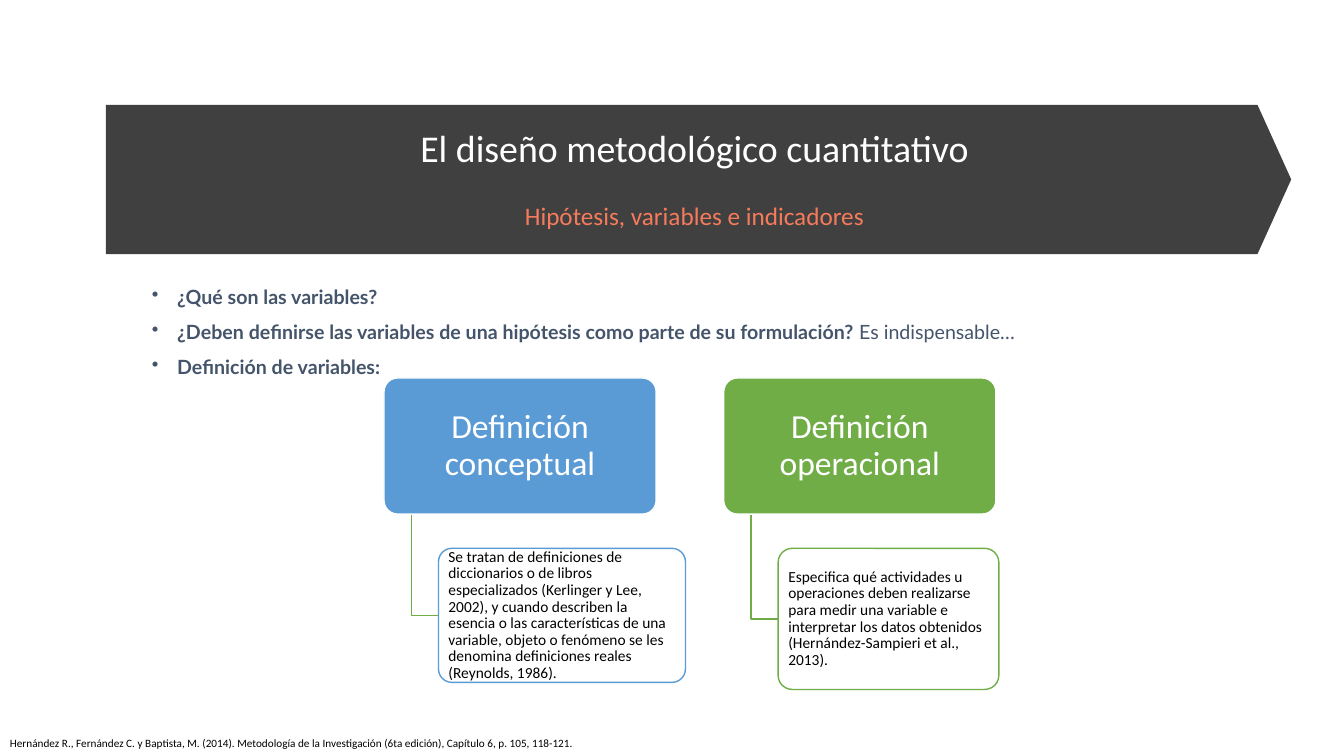
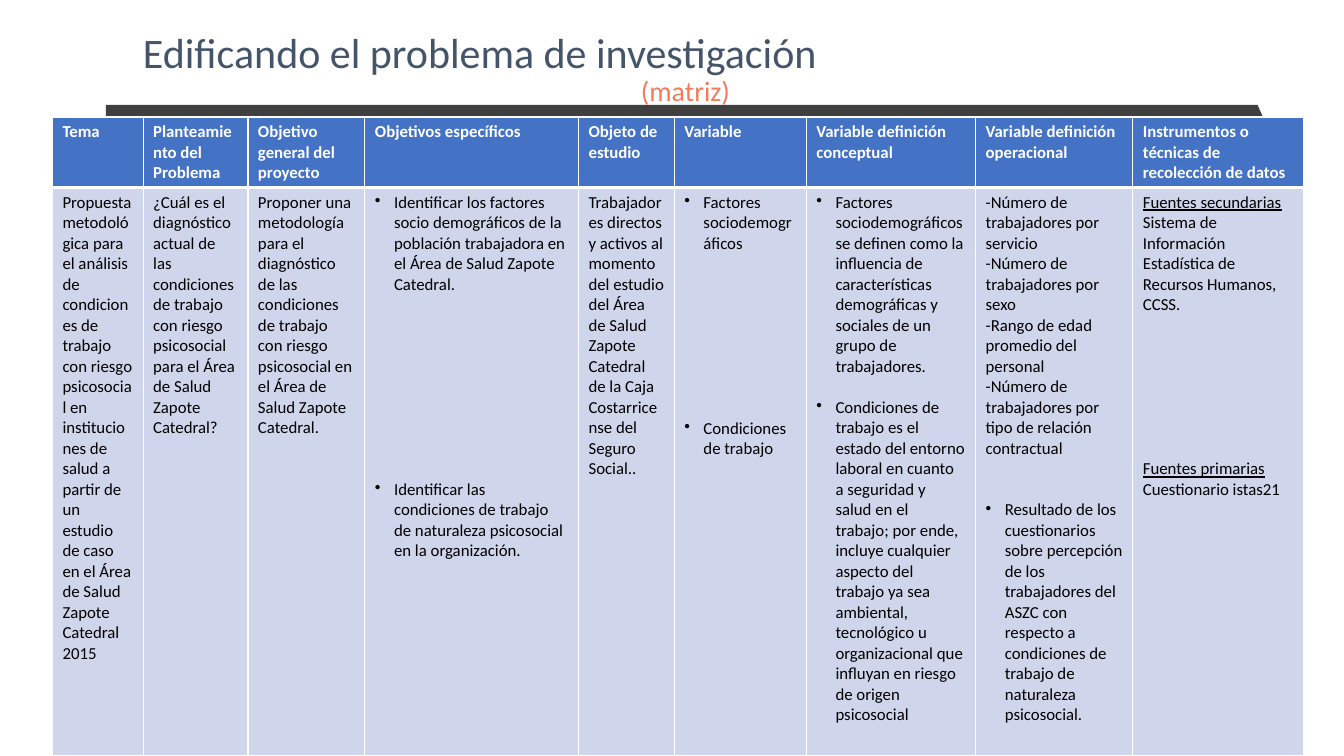
import pptx
import pptx.dml.color
import pptx.enum.shapes
import pptx.enum.text
import pptx.oxml
import pptx.oxml.ns
import pptx.util
from lxml import etree

SHAPES = pptx.enum.shapes.MSO_SHAPE
MIDDLE = pptx.enum.text.MSO_ANCHOR.MIDDLE
LEFT = pptx.enum.text.PP_ALIGN.LEFT
CENTER = pptx.enum.text.PP_ALIGN.CENTER
BAND, SLATE, CORAL = "404040", "44546A", "F57B5B"
BLUE, GREEN, WHITE, BLACK = "5B9BD5", "70AD47", "FFFFFF", "000000"
HEADER, BODY = "4472C4", "CFD5EA"
LINE_HEIGHT = 14.65


def color(code):
    return pptx.dml.color.RGBColor.from_string(code)


def add_line(frame, text, size, ink, font="Calibri", align=LEFT, spacing=1.0, before=0, indent=0):
    paragraph = frame.paragraphs[0]
    if paragraph.runs:
        paragraph = frame.add_paragraph()
    paragraph.add_run().text = text
    paragraph.alignment = align
    paragraph.line_spacing = spacing
    paragraph.space_before = pptx.util.Pt(before)
    if indent:
        properties = paragraph._p.get_or_add_pPr()
        properties.set("marL", str(pptx.util.Inches(indent)))
        properties.set("indent", str(-pptx.util.Inches(indent)))
        bullet = etree.SubElement(properties, pptx.oxml.ns.qn("a:buChar"))
        bullet.set("char", "•")
    paragraph.font.name = font
    paragraph.font.size = pptx.util.Pt(size)
    paragraph.font.color.rgb = color(ink)
    return paragraph


deck = pptx.Presentation()
deck.slide_width = pptx.util.Inches(13.333)
deck.slide_height = pptx.util.Inches(7.5)
col = deck.slide_width / 40
row = deck.slide_height / 22.5

headings = [
    (4.23, 3.96, [("El diseño metodológico cuantitativo", 27, WHITE, CENTER, 0),
                  ("Hipótesis, variables e indicadores", 18, CORAL, CENTER, 24)]),
    (3.96, 0.66, [("Edificando el problema de investigación", 30, SLATE, LEFT, 0),
                  ("(matriz)", 20, CORAL, CENTER, 0)]),
]
slides = []
for left, top, lines in headings:
    slide = deck.slides.add_slide(deck.slide_layouts[6])
    slides.append(slide)
    band = slide.shapes.add_shape(SHAPES.PENTAGON, int(3.15 * col), int(3.12 * row),
                                  int(35.28 * col), int(4.44 * row))
    band.adjustments[0] = 0.226
    band.shadow.inherit = False
    band.fill.solid()
    band.fill.fore_color.rgb = color(BAND)
    band.line.fill.background()
    heading = slide.shapes.add_textbox(int(left * col), int(top * row),
                                       int(32.88 * col), int(2.82 * row)).text_frame
    heading.word_wrap = True
    heading.vertical_anchor = MIDDLE
    for text, size, ink, align, before in lines:
        add_line(heading, text, size, ink, align=align, spacing=0.9, before=before)

variables, matrix = slides

questions = variables.shapes.add_textbox(int(4.23 * col), int(8.4 * row),
                                         int(34.68 * col), int(10.59 * row)).text_frame
questions.word_wrap = True
for question, answer in [
    ("¿Qué son las variables?", ""),
    ("¿Deben definirse las variables de una hipótesis como parte de su formulación? ",
     "Es indispensable…"),
    ("Definición de variables:", ""),
]:
    paragraph = add_line(questions, question, 14, SLATE, "Lato", spacing=0.9, before=10, indent=0.25)
    paragraph.runs[0].font.bold = True
    if answer:
        paragraph.add_run().text = answer

reference = variables.shapes.add_textbox(0, int(21.78 * row), int(17.58 * col), int(0.72 * row)).text_frame
reference.word_wrap = False
add_line(reference, "Hernández R., Fernández C. y Baptista, M. (2014). Metodología de la Investigación "
         "(6ta edición), Capítulo 6, p. 105, 118-121.", 8, BLACK)

card_top, card_width, card_height, detail_top = 11.25, 8.1, 4.05, 16.32
definitions = [
    (11.43, BLUE, "Definición conceptual", 7.35, 3.99,
     "Se tratan de definiciones de diccionarios o de libros especializados (Kerlinger y Lee, 2002), "
     "y cuando describen la esencia o las características de una variable, objeto o fenómeno se les "
     "denomina definiciones reales (Reynolds, 1986)."),
    (21.54, GREEN, "Definición operacional", 6.57, 4.2,
     "Especifica qué actividades u operaciones deben realizarse para medir una variable e interpretar "
     "los datos obtenidos (Hernández-Sampieri et al., 2013)."),
]
for left, accent, term, detail_width, detail_height, detail in definitions:
    detail_left = left + 0.2 * card_width
    stem_left = left + 0.1 * card_width
    stem_end = detail_top + detail_height / 2
    stem = variables.shapes.build_freeform(int(stem_left * col), int((card_top + card_height) * row))
    stem.add_line_segments([(int(stem_left * col), int(stem_end * row)),
                            (int(detail_left * col), int(stem_end * row))], close=False)
    branch = stem.convert_to_shape()
    branch.shadow.inherit = False
    branch.fill.background()
    branch.line.color.rgb = color(GREEN)
    branch.line.width = pptx.util.Pt(1)
    for x, y, width, height, fill, edge, text, size, ink, align, margin in [
        (left, card_top, card_width, card_height, accent, WHITE, term, 24, WHITE, CENTER, 0.09),
        (detail_left, detail_top, detail_width, detail_height, WHITE, accent, detail, 11, BLACK, LEFT, 0.06),
    ]:
        card = variables.shapes.add_shape(SHAPES.ROUNDED_RECTANGLE, int(x * col), int(y * row),
                                          int(width * col), int(height * row))
        card.adjustments[0] = 0.1
        card.shadow.inherit = False
        card.fill.solid()
        card.fill.fore_color.rgb = color(fill)
        card.line.color.rgb = color(edge)
        card.line.width = pptx.util.Pt(1)
        frame = card.text_frame
        frame.word_wrap = True
        frame.vertical_anchor = MIDDLE
        frame.margin_left = frame.margin_right = pptx.util.Inches(margin)
        frame.margin_top = frame.margin_bottom = pptx.util.Inches(0.06)
        add_line(frame, text, size, ink, align=align, spacing=0.9)

columns = [
    (2.7, "Tema", [
        ("Propuesta metodológica para el análisis de condiciones de trabajo con riesgo psicosocial en "
         "instituciones de salud a partir de un estudio de caso en el Área de Salud Zapote Catedral 2015",
         "", 0)]),
    (3.12, "Planteamiento del Problema", [
        ("¿Cuál es el diagnóstico actual de las condiciones de trabajo con riesgo psicosocial para el "
         "Área de Salud Zapote Catedral?", "", 0)]),
    (3.48, "Objetivo general del proyecto", [
        ("Proponer una metodología para el diagnóstico de las condiciones de trabajo con riesgo "
         "psicosocial en el Área de Salud Zapote Catedral.", "", 0)]),
    (6.36, "Objetivos específicos", [
        ("Identificar los factores socio demográficos de la población trabajadora en el Área de Salud "
         "Zapote Catedral.", "bullet", 0),
        ("Identificar las condiciones de trabajo de naturaleza psicosocial en la organización.",
         "bullet", 9)]),
    (2.85, "Objeto de estudio", [
        ("Trabajadores directos y activos al momento del estudio del Área de Salud Zapote Catedral de "
         "la Caja Costarricense del Seguro Social..", "", 0)]),
    (3.93, "Variable", [
        ("Factores sociodemográficos", "bullet", 0),
        ("Condiciones de trabajo", "bullet", 8)]),
    (5.04, "Variable definición conceptual", [
        ("Factores sociodemográficos se definen como la influencia de características demográficas y "
         "sociales de un grupo de trabajadores.", "bullet", 0),
        ("Condiciones de trabajo es el estado del entorno laboral en cuanto a seguridad y salud en el "
         "trabajo; por ende, incluye cualquier aspecto del trabajo ya sea ambiental, tecnológico u "
         "organizacional que influyan en riesgo de origen psicosocial", "bullet", 1)]),
    (4.68, "Variable definición operacional", [
        ("-Número de trabajadores por servicio", "", 0),
        ("-Número de trabajadores por sexo", "", 0),
        ("-Rango de edad promedio del personal", "", 0),
        ("-Número de trabajadores por tipo de relación contractual", "", 0),
        ("Resultado de los cuestionarios sobre percepción de los trabajadores del ASZC con respecto a "
         "condiciones de trabajo de naturaleza psicosocial.", "bullet", 2)]),
    (5.07, "Instrumentos o técnicas de recolección de datos", [
        ("Fuentes secundarias", "underline", 0),
        ("Sistema de Información Estadística de Recursos Humanos, CCSS.", "", 0),
        ("Fuentes primarias", "underline", 7),
        ("Cuestionario istas21", "", 0)]),
]
table_width = sum(width for width, title, entries in columns)
grid = matrix.shapes.add_table(2, len(columns), int(1.56 * col), int(3.48 * row),
                               int(table_width * col), int(19.02 * row)).table
grid.horz_banding = False
grid.rows[0].height = int(2.1 * row)
grid.rows[1].height = int(16.92 * row)
for index, (width, title, entries) in enumerate(columns):
    grid.columns[index].width = int(width * col)
    header, body = grid.cell(0, index), grid.cell(1, index)
    add_line(header.text_frame, title, 12, WHITE).font.bold = True
    for text, style, gap in entries:
        paragraph = add_line(body.text_frame, text, 12, BLACK, before=gap * LINE_HEIGHT,
                             indent=0.19 if style == "bullet" else 0)
        paragraph.font.bold = False
        paragraph.font.underline = style == "underline"
    for cell, fill, thick_side in [(header, HEADER, "B"), (body, BODY, "T")]:
        cell.fill.solid()
        cell.fill.fore_color.rgb = color(fill)
        for position, side in enumerate("LRTB"):
            weight = pptx.util.Pt(3 if side == thick_side else 1)
            border = pptx.oxml.parse_xml(
                f'<a:ln{side} {pptx.oxml.ns.nsdecls("a")} w="{weight}"><a:solidFill>'
                f'<a:srgbClr val="{WHITE}"/></a:solidFill></a:ln{side}>')
            cell._tc.get_or_add_tcPr().insert(position, border)

deck.save("out.pptx")
